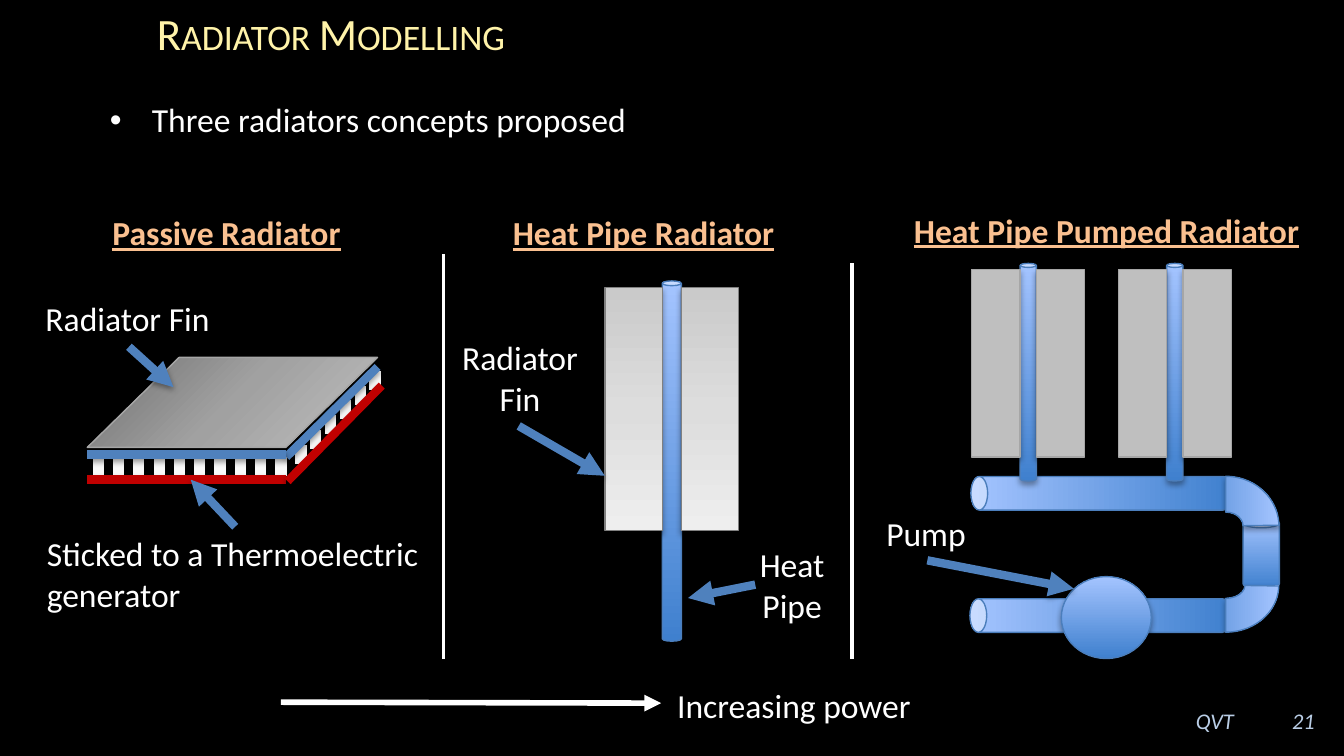
from lxml import etree
from pptx import Presentation
from pptx.dml.color import RGBColor
from pptx.enum import shapes, text
from pptx.oxml import ns
from pptx.util import Pt

BLACK = RGBColor(0x00, 0x00, 0x00)
WHITE = RGBColor(0xFF, 0xFF, 0xFF)
OFF_WHITE = RGBColor(0xF9, 0xF9, 0xF9)
YELLOW = RGBColor(0xFF, 0xF3, 0xA9)
ORANGE = RGBColor(0xFA, 0xC0, 0x90)
PALE_BLUE = RGBColor(0xB9, 0xCD, 0xE5)
BLUE = RGBColor(0x4F, 0x81, 0xBD)
PIPE_EDGE = RGBColor(0x4B, 0x7E, 0xBC)
RED = RGBColor(0xC0, 0x00, 0x00)
SILVER = RGBColor(0xBF, 0xBF, 0xBF)
FIN_EDGE = RGBColor(0xA6, 0xA6, 0xA6)
GRAY = RGBColor(0x80, 0x80, 0x80)

# Gradients: stops as (percent, colour), then the clockwise angle
PIPE_FILL = ([(0, RGBColor(0x3F, 0x80, 0xCE)), (100, RGBColor(0xA4, 0xC4, 0xFF))], 270)
LIGHT_FIN = ([(0, RGBColor(0xCA, 0xCA, 0xCA)), (50, RGBColor(0xDD, 0xDD, 0xDD)),
              (100, RGBColor(0xEE, 0xEE, 0xEE))], 90)
DARK_FIN = ([(0, RGBColor(0x71, 0x71, 0x71)), (50, RGBColor(0xA1, 0xA1, 0xA1)),
             (100, SILVER)], 45)

# Content: text, (left, top, width, height)
HEADINGS = [
    ("Passive Radiator", (9.4, 110.2, 223.9, 28.8)),
    ("Heat Pipe Radiator", (239, 110.2, 211.7, 28.8)),
    ("Heat Pipe Pumped Radiator", (455, 108.7, 275.8, 28.8)),
]
CENTRED_LABELS = [
    ("Radiator Fin", (238.3, 177.1, 80.6, 51.1)),
    ("Heat Pipe", (396.7, 288, 55.4, 51.1)),
    ("Pump", (457.2, 271.4, 77.8, 28.8)),
]
LEFT_LABELS = [
    ("Sticked to a Thermoelectric\ngenerator", (18, 282.2, 216, 51.1)),
    ("Radiator Fin", (17.3, 156.2, 103.7, 28.8)),
    ("Increasing power", (355.7, 363.6, 141.1, 28.8)),
]
FOOTER = [("21", (676.1, 375.1, 35.3, 21.6)), ("QVT", (314.6, 375.8, 353.5, 20.9))]

# Lines: start, end
DIVIDERS = [((237.6, 136.1), (237.6, 352.8)), ((456.5, 141.1), (456.5, 352.8))]
PLATES = [
    ((153.4, 244.8), (202.3, 196.6), BLUE),
    ((46.8, 243.4), (153.4, 243.4), BLUE),
    ((46.8, 257), (153.4, 257), RED),
    ((154.1, 257.8), (204.5, 206.6), RED),
]
POINTERS = [
    ((126, 282.2), (102.2, 257)),
    ((69.1, 185.8), (92.9, 207.4)),
    ((277.9, 228.2), (324, 254.9)),
    ((404.6, 313.2), (368.6, 320.4)),
    ((496.8, 300.2), (575.3, 315.4)),
]

presentation = Presentation()
presentation.slide_width, presentation.slide_height = Pt(720), Pt(405)
slide = presentation.slides.add_slide(presentation.slide_layouts[6])
slide.background.fill.solid()
slide.background.fill.fore_color.rgb = BLACK


def add_element(parent, tag, **attributes):
    return etree.SubElement(parent, ns.qn(tag), {k: str(v) for k, v in attributes.items()})


def set_shadow(shape, opacity, distance):
    """Soft shadow straight down; an opacity of 0 means none."""
    effects = add_element(shape._element.spPr, "a:effectLst")
    if opacity:
        shadow = add_element(effects, "a:outerShdw", blurRad=Pt(3.1), dist=Pt(distance),
                             dir=5400000, rotWithShape=0)
        color = add_element(shadow, "a:srgbClr", val=BLACK)
        add_element(color, "a:alpha", val=opacity * 1000)


def add_text(content, box, size=18, color=WHITE, align=text.PP_ALIGN.LEFT,
             anchor=text.MSO_ANCHOR.TOP, wrap=True, bold=None, italic=None,
             underline=None, small_caps=False, bullet=False):
    frame = slide.shapes.add_textbox(*map(Pt, box)).text_frame
    frame.word_wrap = wrap
    frame.vertical_anchor = anchor
    frame.text = content
    for paragraph in frame.paragraphs:
        paragraph.alignment = align
        if bullet:
            properties = paragraph._p.get_or_add_pPr()
            properties.set("marL", str(Pt(22.5)))
            properties.set("indent", str(Pt(-22.5)))
            add_element(properties, "a:buFont", typeface="Arial")
            add_element(properties, "a:buChar", char="•")
        for run in paragraph.runs:
            font = run.font
            font.name, font.size, font.color.rgb = "Calibri", Pt(size), color
            font.bold, font.italic, font.underline = bold, italic, underline
            if small_caps:
                run._r.get_or_add_rPr().set("cap", "small")


def add_shape(kind, box, fill=PIPE_FILL, edge=PIPE_EDGE, rotation=0, flip=False,
              adjustments=()):
    shape = slide.shapes.add_shape(kind, *map(Pt, box))
    for index, value in enumerate(adjustments):
        shape.adjustments[index] = value
    if isinstance(fill, RGBColor):
        shape.fill.solid()
        shape.fill.fore_color.rgb = fill
    else:
        stops, angle = fill
        shape.fill.gradient()
        shape.fill.gradient_angle = 360 - angle
        stop_list = shape._element.spPr.find(".//" + ns.qn("a:gsLst"))
        stop_list.clear()
        for percent, color in stops:
            stop = add_element(stop_list, "a:gs", pos=percent * 1000)
            add_element(stop, "a:srgbClr", val=color)
    shape.line.color.rgb = edge
    shape.line.width = Pt(0.75)
    shape.rotation = rotation
    if flip:
        shape._element.spPr.xfrm.set("flipV", "1")
    set_shadow(shape, 35, 1.8)


def add_line(start, end, color, width, arrow=False, shadow=38):
    line = slide.shapes.add_connector(shapes.MSO_CONNECTOR.STRAIGHT,
                                      *map(Pt, start + end))
    line.line.color.rgb = color
    line.line.width = Pt(width)
    if arrow:
        add_element(line.line._get_or_add_ln(), "a:tailEnd", type="triangle")
    set_shadow(line, shadow, 1.6)


def add_finned_pipe(pipe, fin_top, fin_width, fin_height, fill, edge):
    """Vertical heat pipe with one fin on each side."""
    left, _, width, _ = pipe
    add_shape(shapes.MSO_SHAPE.CAN, pipe)
    for fin_left in (left - fin_width, left + width):
        add_shape(shapes.MSO_SHAPE.RECTANGLE, (fin_left, fin_top, fin_width, fin_height),
                  fill=fill, edge=edge)


# Title and footer
add_text("Radiator Modelling", (77, -1.4, 575.3, 38.2), size=24, color=YELLOW,
         anchor=text.MSO_ANCHOR.MIDDLE, small_caps=True)
for content, box in FOOTER:
    add_text(content, box, size=12, color=PALE_BLUE, italic=True,
             align=text.PP_ALIGN.RIGHT, anchor=text.MSO_ANCHOR.MIDDLE)

# Heat pipe radiator
add_finned_pipe((354.8, 150.5, 10.2, 193), 154.1, 30.6, 130.3, LIGHT_FIN, GRAY)
for start, end in DIVIDERS:
    add_line(start, end, WHITE, 2)

# Passive radiator: fin, front legs, side legs, plates
add_shape(shapes.MSO_SHAPE.PARALLELOGRAM, (46.8, 191.5, 155.5, 48.2), fill=DARK_FIN,
          edge=FIN_EDGE, adjustments=[1.02])
legs = [(52.6 + 10.88 * i, 244.8) for i in range(10)]
legs += [(161.3 + 7.92 * i, 238.3 - 7.92 * i) for i in range(6)]
for x, y in legs:
    add_line((x, y), (x, y + 10.2), OFF_WHITE, 6, shadow=0)
for start, end, color in PLATES:
    add_line(start, end, color, 4.5)

# Pumped radiator: upper pipe, finned pipes, return bend, lower pipe, pump
ELBOW = [108, 161.46, 0.36]
add_shape(shapes.MSO_SHAPE.CAN, (581, 194.4, 18, 139.7), rotation=270, adjustments=[0.5])
for column in range(2):
    add_finned_pipe((546.5 + 78.5 * column, 141.1, 8.7, 116.6), 144.5, 25.9, 100.3,
                    SILVER, FIN_EDGE)
add_shape(shapes.MSO_SHAPE.CAN, (666, 277.9, 19.4, 37.4))
add_shape(shapes.MSO_SHAPE.BLOCK_ARC, (630, 253.4, 53.3, 56.9), rotation=90,
          adjustments=ELBOW)
add_shape(shapes.MSO_SHAPE.CAN, (580.5, 259.9, 18, 139.7), rotation=90, flip=True,
          adjustments=[0.5])
add_shape(shapes.MSO_SHAPE.BLOCK_ARC, (631.4, 285.1, 50.4, 56.9), rotation=270, flip=True,
          adjustments=ELBOW)
add_shape(shapes.MSO_SHAPE.OVAL, (568.6, 308.9, 48.2, 43.9))

# Headings, bullet and labels
for content, box in HEADINGS:
    add_text(content, box, color=ORANGE, bold=True, underline=True,
             align=text.PP_ALIGN.CENTER)
add_text("Three radiators concepts proposed", (51.8, 49.7, 388.8, 51.1), bullet=True)
for content, box in CENTRED_LABELS:
    add_text(content, box, align=text.PP_ALIGN.CENTER)
for content, box in LEFT_LABELS:
    add_text(content, box, wrap=False)

# Pointers and power arrow
for start, end in POINTERS:
    add_line(start, end, BLUE, 4.5, arrow=True)
add_line((150.5, 376.2), (354.2, 376.7), WHITE, 3, arrow=True)

presentation.save("out.pptx")
